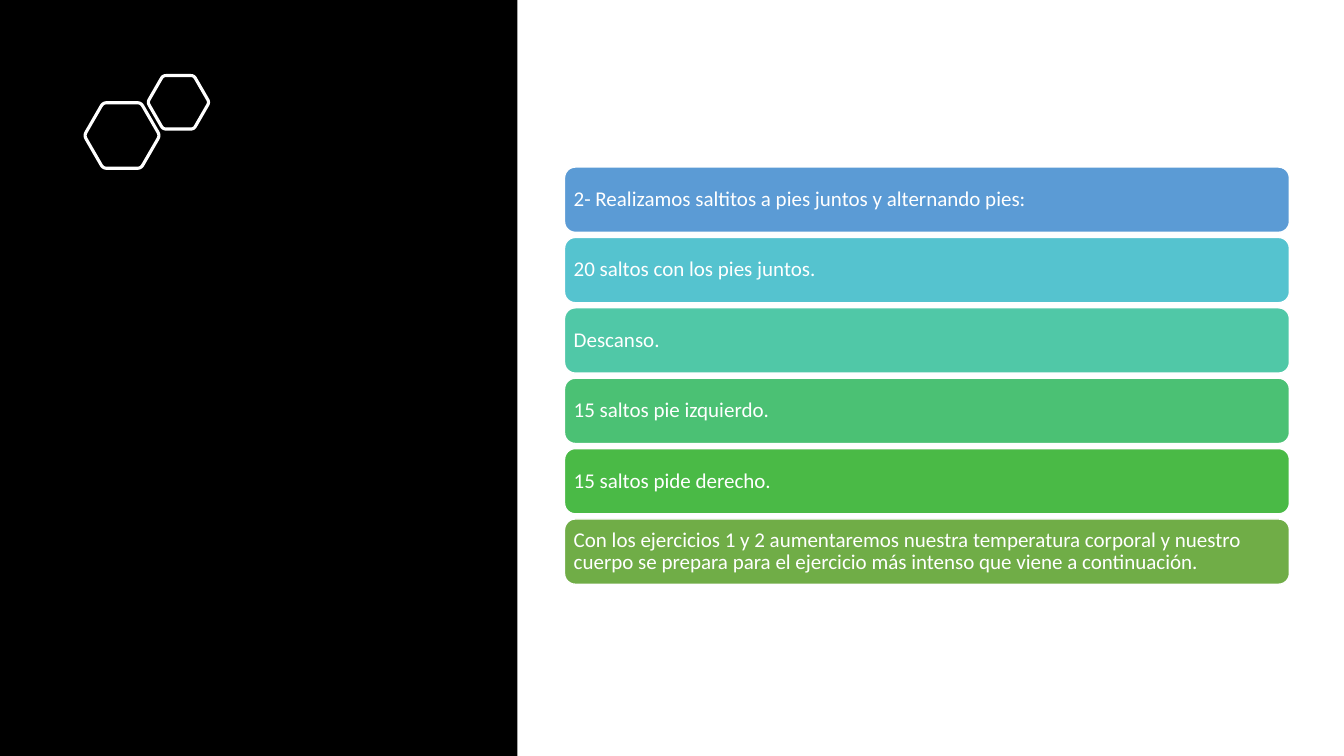
from dataclasses import dataclass
from math import cos, pi, sin, sqrt

from pptx import Presentation
from pptx.dml.color import RGBColor
from pptx.enum.shapes import MSO_SHAPE
from pptx.enum.text import MSO_ANCHOR, PP_ALIGN
from pptx.shapes.autoshape import Shape
from pptx.shapes.shapetree import GroupShapes
from pptx.util import Inches, Pt

# Grid: one hundred columns by one hundred rows
WIDE, HIGH = Inches(13.333), Inches(7.5)
COL, ROW = WIDE / 100, HIGH / 100


@dataclass(frozen=True)
class Theme:
    panel: str = "000000"
    light: str = "FFFFFF"
    font: str = "Calibri"
    size: float = 15
    edge: float = 1
    stroke: float = 2.25


@dataclass(frozen=True)
class Step:
    text: str
    fill: str


@dataclass(frozen=True)
class Hex:
    col: float  # centre
    row: float
    rows: float  # height


THEME = Theme()

STEPS = [
    Step("2- Realizamos saltitos a pies juntos y alternando pies:", "5B9BD5"),
    Step("20 saltos con los pies juntos.", "55C3CF"),
    Step("Descanso.", "50C8A7"),
    Step("15 saltos pie izquierdo.", "4BC174"),
    Step("15 saltos pide derecho.", "4ABA46"),
    Step("Con los ejercicios 1 y 2 aumentaremos nuestra temperatura corporal "
         "y nuestro cuerpo se prepara para el ejercicio más intenso que viene "
         "a continuación.", "70AD47"),
]
LEFT, TOP, SPAN, TALL, PITCH = 42, 22.1, 53.94, 8.64, 9.31

HEXES = [Hex(9.08, 17.93, 8.67), Hex(13.28, 13.53, 7.07)]
BEND = 0.1  # share of each side taken by a rounded corner
CUTS = 6  # straight pieces in a rounded corner


def tint(code: str) -> RGBColor:
    return RGBColor.from_string(code)


def add_box(shapes: GroupShapes, kind: MSO_SHAPE, col: float, row: float,
            cols: float, rows: float, fill: str) -> Shape:
    box = shapes.add_shape(kind, round(col * COL), round(row * ROW),
                           round(cols * COL), round(rows * ROW))
    box.shadow.inherit = False
    box.fill.solid()
    box.fill.fore_color.rgb = tint(fill)
    box.line.fill.background()
    return box


def add_step(shapes: GroupShapes, step: Step, rank: int) -> None:
    box = add_box(shapes, MSO_SHAPE.ROUNDED_RECTANGLE, LEFT,
                  TOP + rank * PITCH, SPAN, TALL, step.fill)
    box.line.color.rgb = tint(THEME.light)
    box.line.width = Pt(THEME.edge)
    frame = box.text_frame
    frame.text = step.text
    frame.word_wrap = True
    frame.vertical_anchor = MSO_ANCHOR.MIDDLE
    frame.margin_left = frame.margin_right = Inches(0.06)
    frame.margin_top = frame.margin_bottom = Inches(0.06)
    para = frame.paragraphs[0]
    para.alignment = PP_ALIGN.LEFT
    para.line_spacing = 0.9
    font = para.runs[0].font
    font.name, font.size = THEME.font, Pt(THEME.size)
    font.color.rgb = tint(THEME.light)


def trace(shape: Hex) -> list[tuple[float, float]]:
    """Outline of a hexagon whose corners are quadratic curves."""
    reach = shape.rows * ROW / sqrt(3)
    tips = [(shape.col * COL + reach * cos(k * pi / 3),
             shape.row * ROW + reach * sin(k * pi / 3)) for k in range(6)]
    points = []
    for k, tip in enumerate(tips):
        last, following = tips[k - 1], tips[(k + 1) % 6]
        for cut in range(CUTS + 1):
            t = cut / CUTS
            back, ahead = BEND * (1 - t) ** 2, BEND * t ** 2
            points.append(tuple(c + back * (a - c) + ahead * (b - c)
                                for a, c, b in zip(last, tip, following)))
    return points


def add_hex(shapes: GroupShapes, shape: Hex) -> None:
    first, *rest = trace(shape)
    pen = shapes.build_freeform(round(first[0]), round(first[1]))
    pen.add_line_segments(rest, close=True)
    ring = pen.convert_to_shape()
    ring.shadow.inherit = False
    ring.fill.background()
    ring.line.color.rgb = tint(THEME.light)
    ring.line.width = Pt(THEME.stroke)


def main() -> None:
    deck = Presentation()
    deck.slide_width, deck.slide_height = WIDE, HIGH
    slide = deck.slides.add_slide(deck.slide_layouts[6])

    # Dark side panel
    add_box(slide.shapes, MSO_SHAPE.RECTANGLE, 0, 0, 38.5, 100, THEME.panel)

    # Pair of hexagons
    pair = slide.shapes.add_group_shape()
    for shape in HEXES:
        add_hex(pair.shapes, shape)

    # Exercise steps
    stack = slide.shapes.add_group_shape()
    for rank, step in enumerate(STEPS):
        add_step(stack.shapes, step, rank)

    deck.save("out.pptx")


if __name__ == "__main__":
    main()
